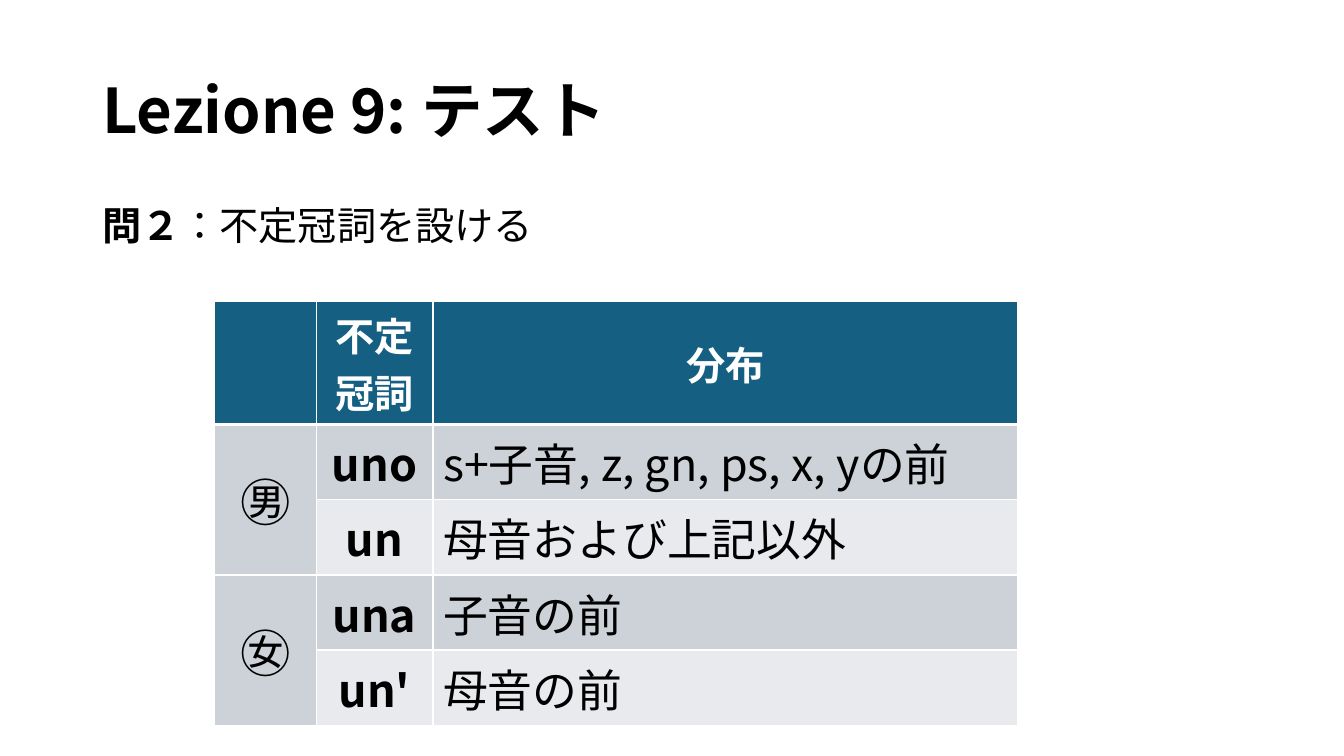
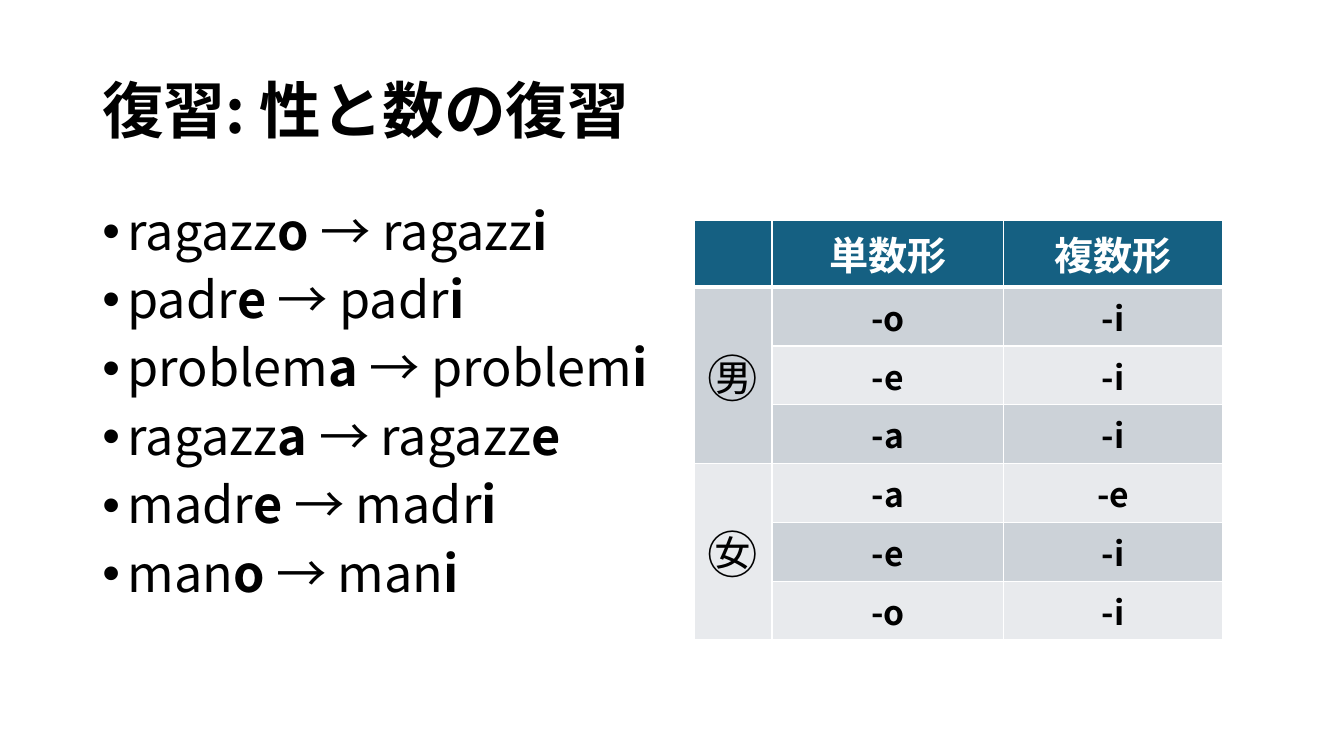
import pptx
import pptx.dml.color
import pptx.enum.lang
import pptx.enum.text
import pptx.oxml
import pptx.oxml.ns
import pptx.util
from lxml import etree

qn = pptx.oxml.ns.qn
ALIGN = pptx.enum.text.PP_ALIGN
MIDDLE = pptx.enum.text.MSO_ANCHOR.MIDDLE
JAPANESE = pptx.enum.lang.MSO_LANGUAGE_ID.JAPANESE

FONT = "Noto Sans CJK JP"
BLACK, WHITE = "000000", "FFFFFF"
HEADER = "156082"
BANDS = ("CCD2D8", "E8EAED")
UNIT = 30  # points in one step of the 32 x 18 grid

LEFT, WIDTH = 2.2, 27.6
TITLE_BOX = (LEFT, 0.96, WIDTH, 3.48)
BODY_BOX = (LEFT, 4.8, WIDTH, 11.42)


def grid(steps):
    return pptx.util.Pt(steps * UNIT)


def rgb(color):
    return pptx.dml.color.RGBColor.from_string(color)


def add_run(p, text, size=28, bold=False, color=BLACK):
    r = p.add_run()
    r.text = text
    r.font.size = pptx.util.Pt(size)
    r.font.bold = bold
    r.font.language_id = JAPANESE
    r.font.color.rgb = rgb(color)
    r.font.name = FONT
    etree.SubElement(r.font._element, qn("a:ea"), typeface=FONT)


def add_bullet(p, indent=0.25):
    pPr = p._p.get_or_add_pPr()
    margin = pptx.util.Inches(indent)
    pPr.set("marL", str(margin))
    pPr.set("indent", str(-margin))
    etree.SubElement(pPr, qn("a:buFont"), typeface="Arial")
    etree.SubElement(pPr, qn("a:buChar"), char="•")


def set_borders(cell, top=1, bottom=1):
    tcPr = cell._tc.get_or_add_tcPr()
    for side, width in (("L", 1), ("R", 1), ("T", top), ("B", bottom)):
        ln = etree.SubElement(tcPr, qn(f"a:ln{side}"), w=str(pptx.util.Pt(width)))
        fill = etree.SubElement(ln, qn("a:solidFill"))
        etree.SubElement(fill, qn("a:srgbClr"), val=WHITE)


class Deck:
    """Holds the presentation, its style and the current slide."""

    def __init__(self):
        self.prs = pptx.Presentation()
        self.prs.slide_width = grid(32)
        self.prs.slide_height = grid(18)
        self.s = None

    def slide(self, title):
        self.s = self.prs.slides.add_slide(self.prs.slide_layouts[6])
        self.text(TITLE_BOX, [[(title, True)]], size=44, anchor=MIDDLE, before=0)

    def text(self, box, paragraphs, size=28, anchor=None, before=10, bullets=False):
        """Each paragraph is a list of (text, bold) runs."""
        tf = self.s.shapes.add_textbox(*map(grid, box)).text_frame
        tf.word_wrap = True
        tf.vertical_anchor = anchor
        for i, runs in enumerate(paragraphs):
            p = tf.add_paragraph() if i else tf.paragraphs[0]
            p.line_spacing = 0.9
            p.space_before = pptx.util.Pt(before)
            if bullets:
                add_bullet(p)
            for text, bold in runs:
                add_run(p, text, size=size, bold=bold)

    def table(self, left, top, widths, heights, header, groups, size, notes=()):
        """groups maps a first-column label to its rows; notes are plain, left-aligned columns."""
        rows = [("", *header)]
        spans = []
        for label, members in groups.items():
            spans.append((len(rows), len(rows) + len(members) - 1))
            rows += [("" if i else label, *row) for i, row in enumerate(members)]

        frame = self.s.shapes.add_table(len(rows), len(widths), grid(left), grid(top),
                                        grid(sum(widths)), grid(sum(heights)))
        table = frame.table
        table.horz_banding = False
        for column, width in zip(table.columns, widths):
            column.width = grid(width)
        for row, height in zip(table.rows, heights):
            row.height = grid(height)

        for i, row in enumerate(rows):
            for j, text in enumerate(row):
                cell = table.cell(i, j)
                set_borders(cell, top=3 if i == 1 else 1, bottom=1 if i else 3)
                cell.fill.solid()
                cell.fill.fore_color.rgb = rgb(BANDS[(i - 1) % 2] if i else HEADER)
                cell.vertical_anchor = MIDDLE
                if not text:
                    continue
                note = i > 0 and j in notes
                p = cell.text_frame.paragraphs[0]
                p.alignment = ALIGN.LEFT if note else ALIGN.CENTER
                if i == 0:
                    add_run(p, text, bold=True, color=WHITE)
                elif j == 0:
                    add_run(p, text, size=36)
                else:
                    add_run(p, text, size=size, bold=not note)
        for first, last in spans:
            table.cell(first, 0).merge(table.cell(last, 0))


def article_slide(deck):
    deck.slide("Lezione 9: テスト")
    deck.text(BODY_BOX, [[("問２", True), ("：不定冠詞を設ける", False)]])
    articles = {
        "㊚": [("uno", "s+子音, z, gn, ps, x, yの前"), ("un", "母音および上記以外")],
        "㊛": [("una", "子音の前"), ("un'", "母音の前")],
    }
    deck.table(5.11, 7.18, (2.42, 2.78, 13.92), (2.93,) + (1.79,) * 4,
               ("不定冠詞", "分布"), articles, size=32, notes=(2,))


def noun_slide(deck):
    nouns = {
        "㊚": [("ragazz", "o", "i"), ("padr", "e", "i"), ("problem", "a", "i")],
        "㊛": [("ragazz", "a", "e"), ("madr", "e", "i"), ("man", "o", "i")],
    }
    deck.slide("復習: 性と数の復習")
    endings = {gender: [(f"-{one}", f"-{many}") for _, one, many in group]
               for gender, group in nouns.items()}
    deck.table(16.53, 5.25, (1.85, 5.52, 5.21), (1.59,) + (1.4,) * 6,
               ("単数形", "複数形"), endings, size=24)
    examples = [[(stem, False), (f"{one} ", True), (f"→ {stem}", False), (many, True)]
                for group in nouns.values() for stem, one, many in group]
    deck.text(BODY_BOX, examples, size=36, bullets=True)


def main():
    deck = Deck()
    article_slide(deck)
    noun_slide(deck)
    deck.prs.save("out.pptx")


if __name__ == "__main__":
    main()
